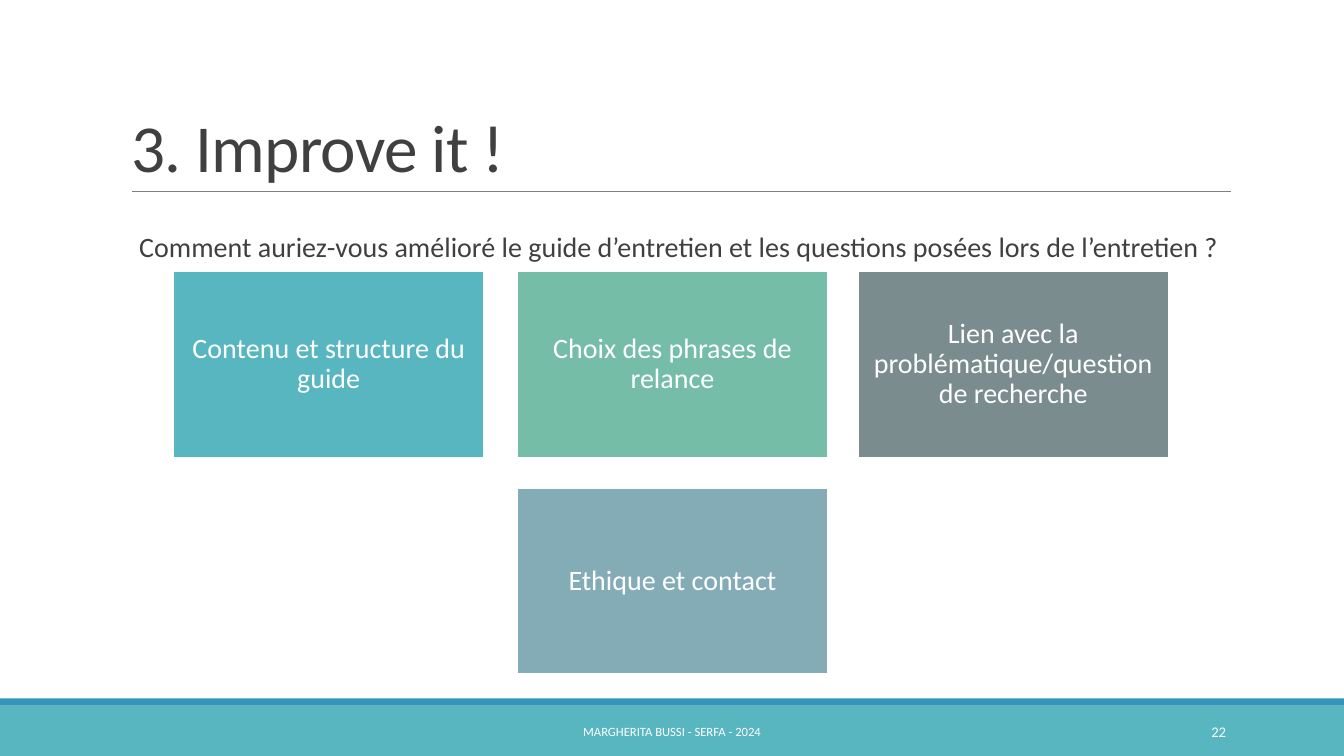
from lxml.etree import SubElement
from pptx import Presentation
from pptx.dml.color import RGBColor
from pptx.enum.shapes import MSO_CONNECTOR as Connector, MSO_SHAPE as Shape
from pptx.enum.text import MSO_ANCHOR as Anchor, MSO_AUTO_SIZE as AutoSize, PP_ALIGN as Align
from pptx.oxml.ns import qn
from pptx.util import Inches, Pt

TEAL = RGBColor(0x58, 0xB6, 0xC0)
BLUE = RGBColor(0x34, 0x94, 0xBA)
GREEN = RGBColor(0x75, 0xBD, 0xA7)
SLATE = RGBColor(0x7A, 0x8C, 0x8E)
MIST = RGBColor(0x84, 0xAC, 0xB6)
GREY = RGBColor(0x80, 0x80, 0x80)
DARK = RGBColor(0x40, 0x40, 0x40)
WHITE = RGBColor(0xFF, 0xFF, 0xFF)


class SlideBuilder:
    """Holds the style and the current slide, and adds each kind of element."""

    font = "Calibri"

    def __init__(self, slide):
        self.slide = slide

    def set_text(self, frame, text, size, color, align, anchor, spacing=1.0):
        frame.text = text
        frame.word_wrap = True
        frame.auto_size = AutoSize.NONE
        frame.vertical_anchor = anchor
        paragraph = frame.paragraphs[0]
        paragraph.alignment = align
        paragraph.line_spacing = spacing
        paragraph.space_before = Pt(0)
        run = paragraph.runs[0]
        run.font.name = self.font
        run.font.size = Pt(size)
        run.font.color.rgb = color
        return paragraph

    def place(self, shape, left, top, width, height):
        shape.left, shape.top = Inches(left), Inches(top)
        shape.width, shape.height = Inches(width), Inches(height)

    def title(self, text, *box):
        heading = self.slide.shapes.title
        self.place(heading, *box)
        paragraph = self.set_text(
            heading.text_frame, text, 48, DARK, Align.LEFT, Anchor.BOTTOM, 0.85)
        paragraph.runs[0]._r.get_or_add_rPr().set("spc", "-50")

    def body(self, text, *box):
        question = self.slide.placeholders[1]
        self.place(question, *box)
        frame = question.text_frame
        frame.margin_left = frame.margin_right = 0
        paragraph = self.set_text(frame, text, 20, DARK, Align.LEFT, Anchor.TOP, 0.9)
        properties = paragraph._p.get_or_add_pPr()
        properties.set("marL", str(Inches(0.1)))
        properties.set("indent", "0")
        SubElement(properties, qn("a:buNone"))

    def bar(self, color, *box):
        band = self.slide.shapes.add_shape(Shape.RECTANGLE, *map(Inches, box))
        band.shadow.inherit = False
        band.fill.solid()
        band.fill.fore_color.rgb = color
        band.line.fill.background()
        return band

    def tile(self, text, color, *box):
        card = self.bar(color, *box)
        card.line.color.rgb = WHITE
        card.line.width = Pt(1.25)
        frame = card.text_frame
        frame.margin_left = frame.margin_right = Inches(0.08)
        frame.margin_top = frame.margin_bottom = Inches(0.08)
        self.set_text(frame, text, 20, WHITE, Align.CENTER, Anchor.MIDDLE, 0.9)

    def rule(self, left, right, y):
        line = self.slide.shapes.add_connector(
            Connector.STRAIGHT, Inches(left), Inches(y), Inches(right), Inches(y))
        line.line.color.rgb = GREY
        line.line.width = Pt(0.5)
        SubElement(line._element.spPr, qn("a:effectLst"))

    def label(self, text, size, align, *box):
        caption = self.slide.shapes.add_textbox(*map(Inches, box))
        self.set_text(caption.text_frame, text, size, WHITE, align, Anchor.MIDDLE)


def main():
    deck = Presentation()
    deck.slide_width, deck.slide_height = Inches(13.33), Inches(7.5)
    builder = SlideBuilder(deck.slides.add_slide(deck.slide_layouts[1]))

    builder.bar(TEAL, 0, 7, 13.33, 0.5)
    builder.bar(BLUE, 0, 6.93, 13.33, 0.07)
    builder.rule(1.31, 12.21, 1.9)
    builder.title("3. Improve it !", 1.2, 0.31, 11, 1.59)
    builder.body("Comment auriez-vous amélioré le guide d’entretien et les questions "
                 "posées lors de l’entretien ?", 1.28, 2.26, 11, 3.89)

    upper, lower = 2.69, 4.84
    left, middle, right = 1.72, 5.13, 8.51
    topics = [
        ("Contenu et structure du guide", TEAL, left, upper),
        ("Choix des phrases de relance", GREEN, middle, upper),
        ("Lien avec la problématique/question de recherche", SLATE, right, upper),
        ("Ethique et contact", MIST, middle, lower),
    ]
    for topic, color, x, y in topics:
        builder.tile(topic, color, x, y, 3.08, 1.85)

    builder.label("22", 10.5, Align.RIGHT, 10.83, 7.06, 1.43, 0.4)
    builder.label("MARGHERITA BUSSI - SERFA - 2024", 9, Align.CENTER, 4.03, 7.06, 5.27, 0.4)
    deck.save("out.pptx")


if __name__ == "__main__":
    main()
